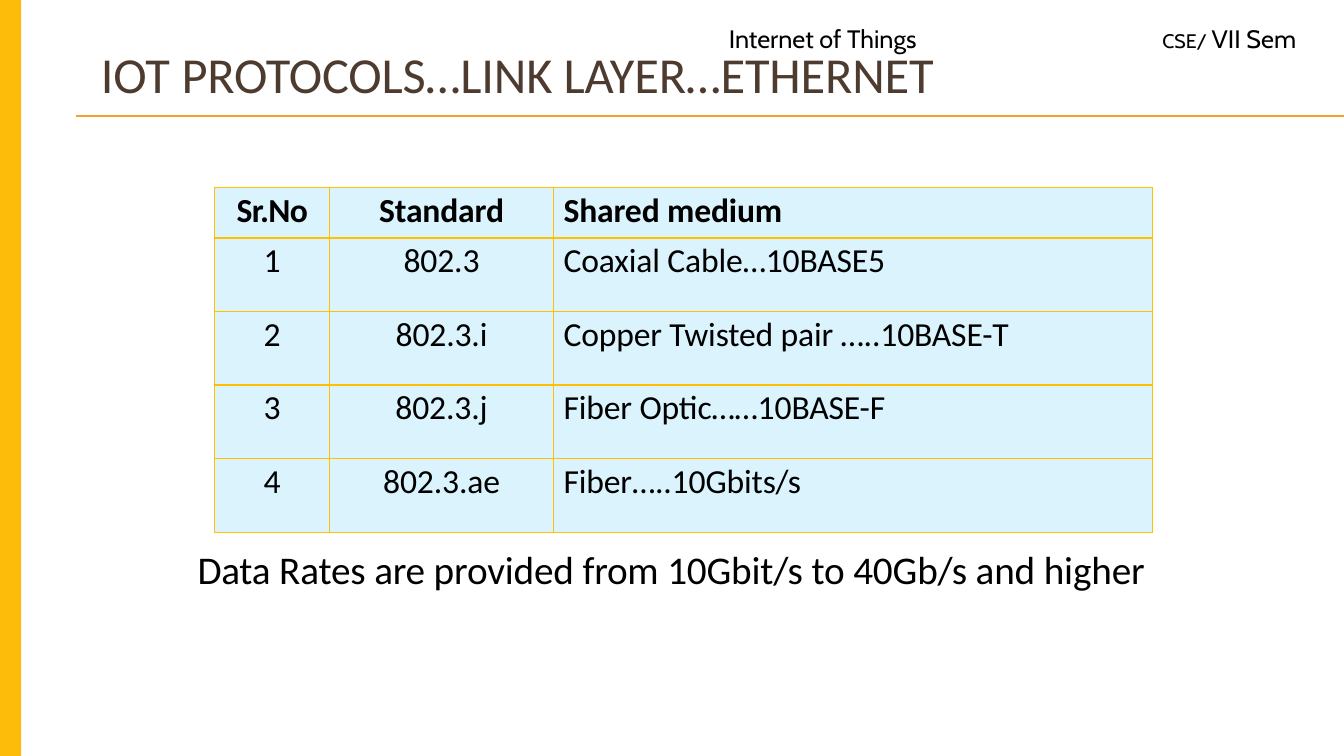
from lxml import etree
from pptx import Presentation
from pptx.dml.color import RGBColor
from pptx.enum import shapes, text
from pptx.oxml.ns import qn
from pptx.util import Inches, Pt

GOLD = RGBColor(0xFF, 0xC0, 0x00)
AMBER = RGBColor(0xFD, 0xBC, 0x09)
ORANGE = RGBColor(0xF0, 0xA2, 0x2E)
BROWN = RGBColor(0x4E, 0x3B, 0x30)
PALE = RGBColor(0xDA, 0xF3, 0xFD)
BLACK = RGBColor(0, 0, 0)


def write(frame, *runs, size, font="Calibri", color=BLACK, bold=False,
          align=text.PP_ALIGN.LEFT, before=0, margins=(0, 0.01, 0, 0),
          anchor=text.MSO_ANCHOR.TOP):
    """Fill a text frame with (words, letter spacing in points[, size]) runs."""
    frame.word_wrap = True
    frame.vertical_anchor = anchor
    (frame.margin_left, frame.margin_top,
     frame.margin_right, frame.margin_bottom) = map(Inches, margins)
    para = frame.paragraphs[0]
    para.alignment = align
    para.space_before = Pt(before)
    for words, gap, *own in runs:
        run = para.add_run()
        run.text = words
        run.font.size = Pt(own[0] if own else size)
        run.font.name = font
        run.font.bold = bold
        run.font.color.rgb = color
        run.font._element.set("spc", str(round(gap * 100)))


def edge(cell, widths):
    """Draw gold borders; widths in points, keyed by side L, R, T, B."""
    props = cell._tc.get_or_add_tcPr()
    for spot, (side, width) in enumerate(widths.items()):
        line = etree.Element(qn("a:ln" + side), w=str(Pt(width)))
        fill = etree.SubElement(line, qn("a:solidFill"))
        etree.SubElement(fill, qn("a:srgbClr"), val=str(GOLD))
        props.insert(spot, line)


deck = Presentation()
deck.slide_width, deck.slide_height = Inches(13.33), Inches(7.5)
slide = deck.slides.add_slide(deck.slide_layouts[5])

# Header rules and title
for y in (1.15, 1.16):
    rule = slide.shapes.add_connector(
        shapes.MSO_CONNECTOR.STRAIGHT,
        Inches(0.75), Inches(y), Inches(13.33), Inches(y))
    rule.line.color.rgb = ORANGE
    rule.line.width = Pt(0.75)
    etree.SubElement(rule._element.spPr, qn("a:effectLst"))

title = slide.shapes.title
title.left, title.top = Inches(1), Inches(0.34)
title.width, title.height = Inches(8.73), Inches(0.76)
title.text_frame.auto_size = text.MSO_AUTO_SIZE.NONE
write(title.text_frame, ("IOT ", 0), ("PROTOCOLS…LINK LAYER…ETHERNET", -0.1),
      size=36, color=BROWN, before=1, anchor=text.MSO_ANCHOR.MIDDLE)

# Table of Ethernet standards
rows = [
    ("Sr.No", "Standard", "Shared medium"),
    ("1", "802.3", "Coaxial Cable…10BASE5"),
    ("2", "802.3.i", "Copper Twisted pair …..10BASE-T"),
    ("3", "802.3.j", "Fiber Optic……10BASE-F"),
    ("4", "802.3.ae", "Fiber…..10Gbits/s"),
]
table = slide.shapes.add_table(
    len(rows), 3, Inches(2.13), Inches(1.86), Inches(9.3), Inches(3.42)).table
table.horz_banding = False
for col, width in zip(table.columns, (1.14, 2.22, 5.94)):
    col.width = Inches(width)
for r, row in enumerate(rows):
    table.rows[r].height = Inches(0.73 if r else 0.5)
    for c, words in enumerate(row):
        cell = table.cell(r, c)
        cell.fill.solid()
        cell.fill.fore_color.rgb = PALE
        cell.margin_left = Inches(0.1 if c == 2 else 0)
        cell.margin_top = Inches(0.03)
        cell.margin_right = cell.margin_bottom = 0
        para = cell.text_frame.paragraphs[0]
        para.alignment = text.PP_ALIGN.LEFT if c == 2 else text.PP_ALIGN.CENTER
        para.space_before = Pt(2)
        run = para.add_run()
        run.text = words
        run.font.size = Pt(24)
        run.font.name = "Calibri"
        run.font.bold = r == 0
        run.font.color.rgb = BLACK
        gap = -10 if c else 0 if r else -50
        run.font._element.set("spc", str(gap))
        edge(cell, {"L": 1, "R": 1, "T": 2.25 if r == 1 else 1,
                    "B": 2.25 if r == 0 else 1})

# Side bar
bar = slide.shapes.add_shape(
    shapes.MSO_SHAPE.RECTANGLE, 0, 0, Inches(0.21), Inches(7.5))
bar.shadow.inherit = False
bar.fill.solid()
bar.fill.fore_color.rgb = AMBER
bar.line.fill.background()

# Caption and course labels
pad = (0.1, 0.05, 0.1, 0.05)
labels = [
    ((1.96, 5.4, 9.53, 0.49),
     [("Data ", -0.2), ("Rates ", -0.1), ("are ", -0.2), ("provided ", -0.1),
      ("from ", -0.2), ("10Gbit/s ", -0.1), ("to ", -0.2),
      ("40Gb/s and higher", -0.1)],
     dict(size=28, before=0.9)),
    ((7.13, 0.18, 3.25, 0.49), [("Internet of Things", 0)],
     dict(size=18, font="Cabin", margins=pad)),
    ((11.43, 0.18, 1.57, 0.49), [("CSE/ ", 0, 14), ("VII Sem", 0)],
     dict(size=18, font="Cabin", margins=pad)),
]
for place, runs, form in labels:
    box = slide.shapes.add_textbox(*map(Inches, place))
    write(box.text_frame, *runs, **form)

deck.save("out.pptx")
